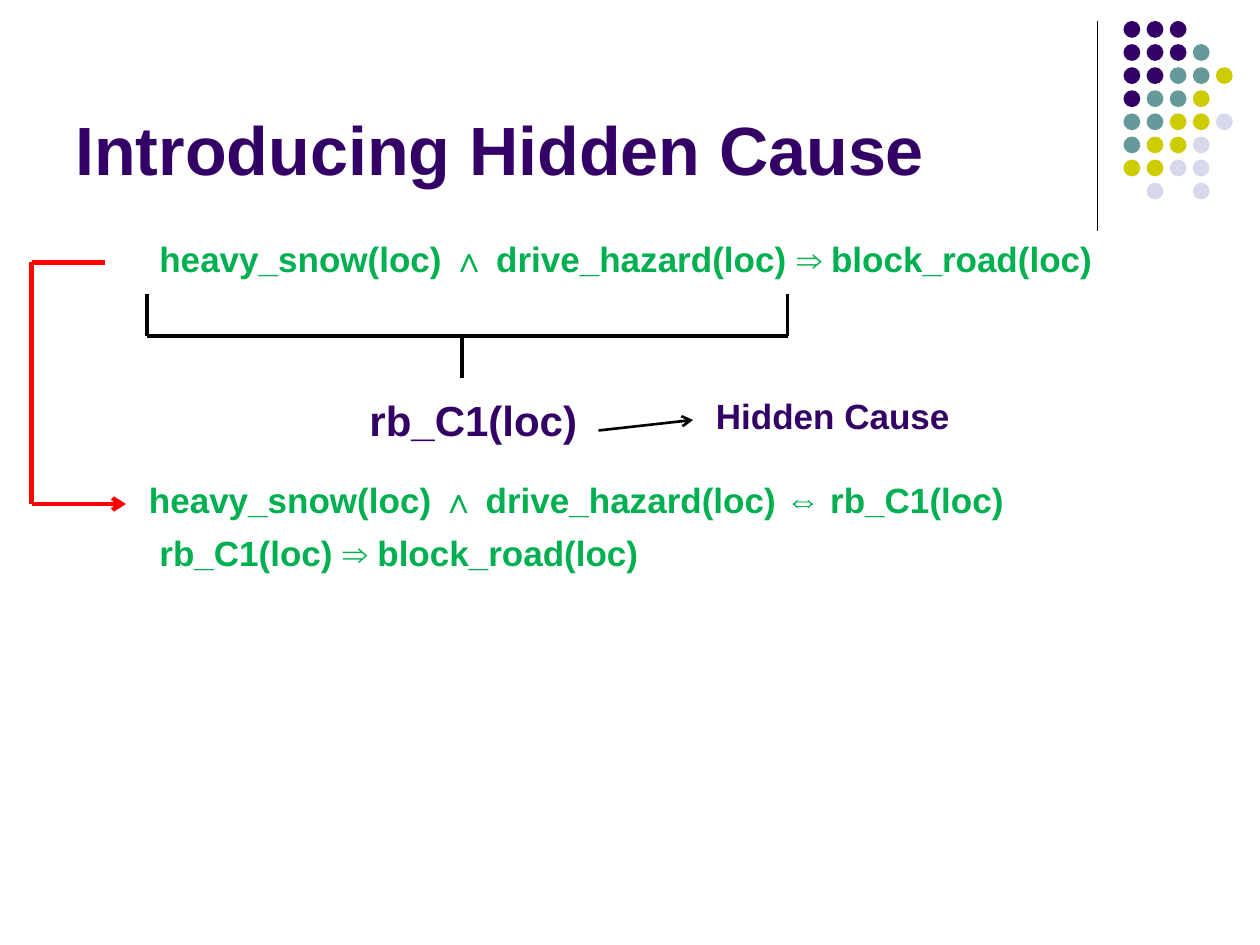
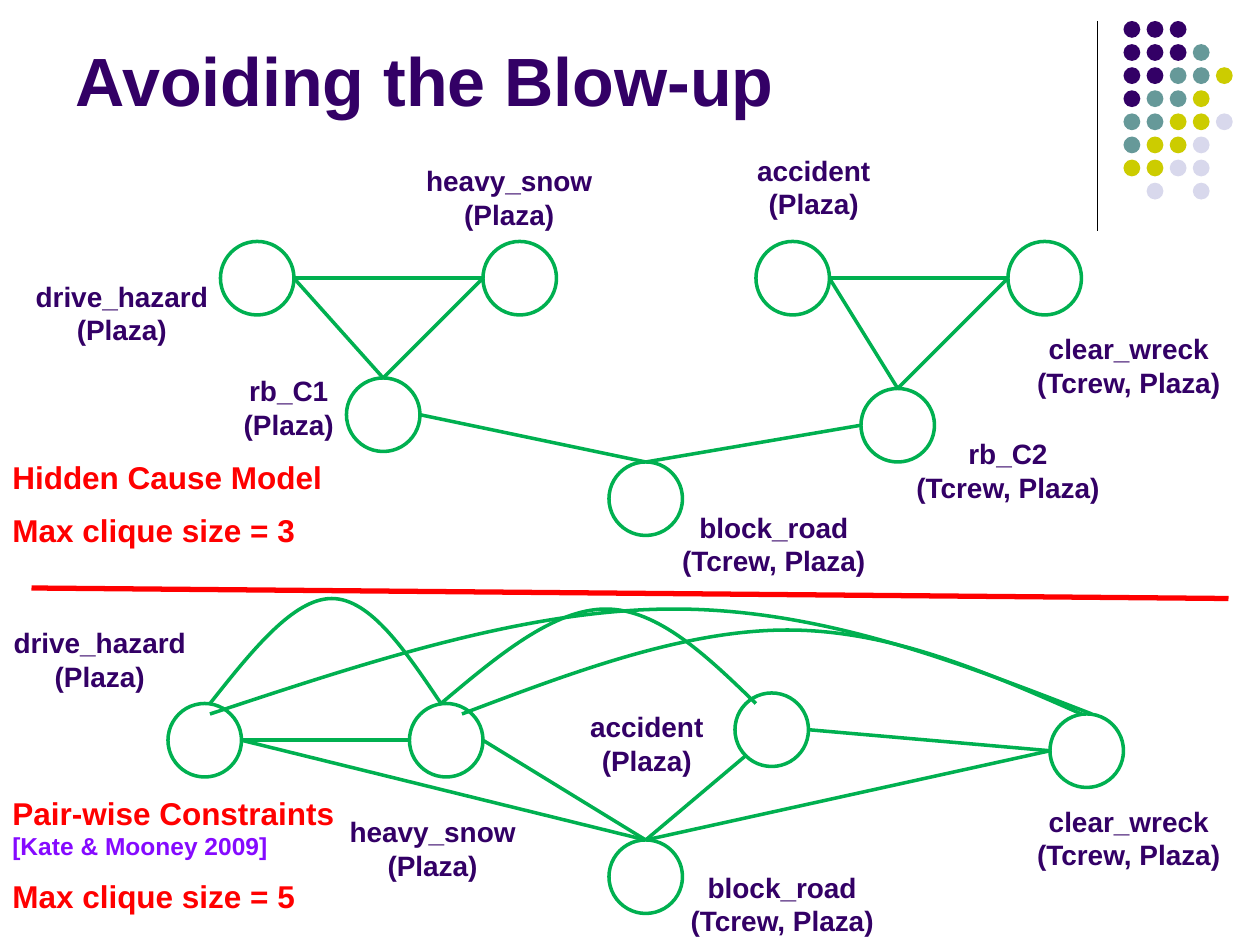
import pptx
import pptx.util
from pptx.dml.color import RGBColor
from pptx.enum.shapes import MSO_CONNECTOR, MSO_SHAPE
from pptx.enum.text import MSO_ANCHOR, PP_ALIGN
from pptx.oxml.ns import qn
from lxml import etree

# Grid: 12 units to the inch, so a slide is 120 columns by 90 rows
COLS, ROWS = 120, 90
UNIT = pptx.util.Inches(1) // 12

FONT = "Arial"
PURPLE = RGBColor(0x33, 0x00, 0x66)
TEAL = RGBColor(0x66, 0x99, 0x99)
OLIVE = RGBColor(0xCC, 0xCC, 0x00)
LAVENDER = RGBColor(0xD8, 0xD8, 0xEC)
GREEN = RGBColor(0x00, 0xB0, 0x50)
RED = RGBColor(0xFF, 0x00, 0x00)
VIOLET = RGBColor(0x85, 0x0A, 0xFF)
BLACK = RGBColor(0x00, 0x00, 0x00)
WHITE = RGBColor(0xFF, 0xFF, 0xFF)

# Corner ornament: one letter per dot, a point for a gap
DOT_ROWS = ["PPP", "PPPT", "PPTTO", "PTTO", "TTOOL", "TOOL", "OOLL", ".L.L"]
DOT_COLORS = {"P": PURPLE, "T": TEAL, "O": OLIVE, "L": LAVENDER}
DOT_LEFT, DOT_TOP, DOT_PITCH, DOT_SIZE = 107, 2, 2.2, 1.6

# Slide 1: formulas (text, column, row), labels (text, box, size), lines
FORMULAS = [
    ("heavy_snow(loc) ∧ drive_hazard(loc) ⇒ block_road(loc)", 14, 22),
    ("heavy_snow(loc) ∧ drive_hazard(loc) ⇔ rb_C1(loc)", 13, 45),
    ("rb_C1(loc) ⇒ block_road(loc)", 14, 50),
]
CAUSE_LABELS = [
    ("rb_C1(loc)", (34, 37, 22.4, 6), 24),
    ("Hidden Cause", (67, 37, 25.8, 5.3), 20),
]
REWRITE_PATH = [((3, 25), (10, 25)), ((3, 25), (3, 48))]
REWRITE_ARROW = ((3, 48), (12, 48))
BRACE = [((14, 32), (75, 32)), ((75, 28), (75, 32)),
         ((14, 28), (14, 32)), ((44, 32), (44, 36))]
CAUSE_ARROW = ((57, 41), (66, 40))

# Slide 2: node -> (column, row), label centre column, label row, argument
NODE_SIZE = 7
PLAZA, CREW = "(Plaza)", "(Tcrew, Plaza)"
HIDDEN_NODES = {
    "drive_hazard": ((21, 23), 11.6, 26, PLAZA),
    "heavy_snow": ((46, 23), 48.5, 15, PLAZA),
    "accident": ((72, 23), 77.5, 14, PLAZA),
    "clear_wreck": ((96, 23), 107.5, 31, CREW),
    "rb_C1": ((33, 36), 27.5, 35, PLAZA),
    "rb_C2": ((82, 37), 96, 41, CREW),
    "block_road": ((58, 44), 73.7, 48, CREW),
}
PAIR_NODES = {
    "drive_hazard": ((16, 67), 9.5, 59, PLAZA),
    "heavy_snow": ((39, 67), 41.2, 77, PLAZA),
    "accident": ((70, 66), 61.6, 67, PLAZA),
    "clear_wreck": ((100, 68), 107.5, 76, CREW),
    "block_road": ((58, 80), 74.5, 82.3, CREW),
}
# Edges: node, side, node, side
HIDDEN_EDGES = [
    ("drive_hazard", "right", "rb_C1", "top"),
    ("heavy_snow", "left", "rb_C1", "top"),
    ("drive_hazard", "right", "heavy_snow", "left"),
    ("accident", "right", "clear_wreck", "left"),
    ("accident", "right", "rb_C2", "top"),
    ("clear_wreck", "left", "rb_C2", "top"),
    ("block_road", "top", "rb_C1", "right"),
    ("block_road", "top", "rb_C2", "left"),
]
PAIR_EDGES = [
    ("drive_hazard", "right", "heavy_snow", "left"),
    ("drive_hazard", "right", "block_road", "top"),
    ("heavy_snow", "right", "block_road", "top"),
    ("accident", "lower left", "block_road", "top"),
    ("clear_wreck", "left", "block_road", "top"),
    ("accident", "right", "clear_wreck", "left"),
]
SIDES = {"top": (0.5, 0), "left": (0, 0.5), "right": (1, 0.5),
         "lower left": (0.15, 0.85)}
# Arcs: start, peak, end
PAIR_ARCS = [
    ((20, 67), (31.6, 57), (42, 67)),
    ((42, 67), (57.7, 58), (72, 67)),
    ((20, 68), (64.2, 58), (104, 68)),
    ((44, 68), (75, 60), (103, 68)),
]
DIVIDER = ((3, 56), (117, 57))
# Captions: box, then (text, size, colour, space before)
CAPTIONS = [
    ((0, 75, 33.4, 13), [("Pair-wise Constraints", 18, RED, 0),
                         ("[Kate & Mooney 2009]", 14, VIOLET, 0),
                         ("Max clique size = 5", 18, RED, 9)]),
    ((0, 43, 32.2, 10.1), [("Hidden Cause Model", 18, RED, 0),
                           ("Max clique size = 3", 18, RED, 9)]),
]


def grid(*values):
    return [pptx.util.Emu(round(v * UNIT)) for v in values]


def add_text(s, box, lines, align=PP_ALIGN.LEFT, wrap=False,
             anchor=MSO_ANCHOR.TOP):
    """Bold text box; lines are (text, size, colour, space before)."""
    tf = s.shapes.add_textbox(*grid(*box)).text_frame
    tf.word_wrap = wrap
    tf.vertical_anchor = anchor
    tf.text = "\n".join(line[0] for line in lines)
    for p, (_, size, color, gap) in zip(tf.paragraphs, lines):
        p.alignment = align
        p.space_before = pptx.util.Pt(gap)
        font = p.runs[0].font
        font.name, font.size, font.bold = FONT, pptx.util.Pt(size), True
        font.color.rgb = color


def add_line(shapes, ends, color, width, arrow=False):
    c = shapes.add_connector(MSO_CONNECTOR.STRAIGHT, *grid(*ends[0], *ends[1]))
    c.line.color.rgb = color
    c.line.width = pptx.util.Pt(width)
    if arrow:
        etree.SubElement(c.line._get_or_add_ln(), qn("a:tailEnd"), type="arrow")
    etree.SubElement(c._element.spPr, qn("a:effectLst"))


def add_circle(shapes, left, top, size, fill, outline=None):
    sp = shapes.add_shape(MSO_SHAPE.OVAL, *grid(left, top, size, size))
    sp.shadow.inherit = False
    sp.fill.solid()
    sp.fill.fore_color.rgb = fill
    if outline is None:
        sp.line.fill.background()
    else:
        sp.line.color.rgb = outline
        sp.line.width = pptx.util.Pt(2)


def midpoint(a, b):
    return (a[0] + b[0]) / 2, (a[1] + b[1]) / 2


def add_arc(s, start, peak, end):
    """Smooth curve through three points, level at the peak."""
    reach = (end[0] - start[0]) / 6
    before, after = (peak[0] - reach, peak[1]), (peak[0] + reach, peak[1])
    curves = [(midpoint(start, before), before, peak),
              (after, midpoint(after, end), end)]
    builder = s.shapes.build_freeform(*grid(*start), scale=1.0)
    builder.add_line_segments([grid(*peak), grid(*end)], close=False)
    sp = builder.convert_to_shape()
    sp.shadow.inherit = False
    sp.fill.background()
    sp.line.color.rgb = GREEN
    sp.line.width = pptx.util.Pt(2)
    # Turn the two straight segments into Bezier segments
    for segment, points in zip(list(sp._element.iter(qn("a:lnTo"))), curves):
        curve = etree.Element(qn("a:cubicBezTo"))
        for point in points:
            x, y = grid(*point)
            etree.SubElement(curve, qn("a:pt"), x=str(x - sp.left),
                             y=str(y - sp.top))
        segment.getparent().replace(segment, curve)


def add_slide(prs, title, title_height):
    s = prs.slides.add_slide(prs.slide_layouts[6])
    add_line(s.shapes, ((104.5, 2), (104.5, 22)), BLACK, 0.75)
    dots = s.shapes.add_group_shape().shapes
    for row, letters in enumerate(DOT_ROWS):
        for col, letter in enumerate(letters):
            if letter in DOT_COLORS:
                add_circle(dots, DOT_LEFT + col * DOT_PITCH,
                           DOT_TOP + row * DOT_PITCH, DOT_SIZE,
                           DOT_COLORS[letter])
    add_text(s, (6, 1.6, 99, title_height), [(title, 39, PURPLE, 0)],
             wrap=True, anchor=MSO_ANCHOR.BOTTOM)
    return s


def add_network(s, nodes, edges):
    for name, ((col, row), center, label_row, argument) in nodes.items():
        add_circle(s.shapes, col, row, NODE_SIZE, WHITE, GREEN)
        width = 19 if argument == PLAZA else 20.2
        add_text(s, (center - width / 2, label_row, width, 7.7),
                 [(name, 16, PURPLE, 0), (argument, 16, PURPLE, 0)],
                 PP_ALIGN.CENTER)

    def site(name, side):
        (col, row), (dx, dy) = nodes[name][0], SIDES[side]
        return col + dx * NODE_SIZE, row + dy * NODE_SIZE

    for a, a_side, b, b_side in edges:
        add_line(s.shapes, (site(a, a_side), site(b, b_side)), GREEN, 2)


def build_hidden_cause(prs):
    s = add_slide(prs, "Introducing Hidden Cause", 17)
    for text, col, row in FORMULAS:
        add_text(s, (col, row, 100, 5.3), [(text, 20, GREEN, 0)], wrap=True)
    rewrite = s.shapes.add_group_shape().shapes
    add_line(rewrite, REWRITE_ARROW, RED, 2.5, arrow=True)
    for ends in REWRITE_PATH:
        add_line(rewrite, ends, RED, 2.5)
    brace = s.shapes.add_group_shape().shapes
    for ends in BRACE:
        add_line(brace, ends, BLACK, 2)
    for text, box, size in CAUSE_LABELS:
        add_text(s, box, [(text, size, PURPLE, 0)])
    add_line(s.shapes, CAUSE_ARROW, BLACK, 1.5, arrow=True)


def build_blow_up(prs):
    s = add_slide(prs, "Avoiding the Blow-up", 10.4)
    add_network(s, PAIR_NODES, PAIR_EDGES)
    add_network(s, HIDDEN_NODES, HIDDEN_EDGES)
    add_line(s.shapes, DIVIDER, RED, 3)
    for arc in PAIR_ARCS:
        add_arc(s, *arc)
    for box, lines in CAPTIONS:
        add_text(s, box, lines)


def main():
    prs = pptx.Presentation()
    prs.slide_width, prs.slide_height = grid(COLS, ROWS)
    build_hidden_cause(prs)
    build_blow_up(prs)
    prs.save("out.pptx")


if __name__ == "__main__":
    main()
